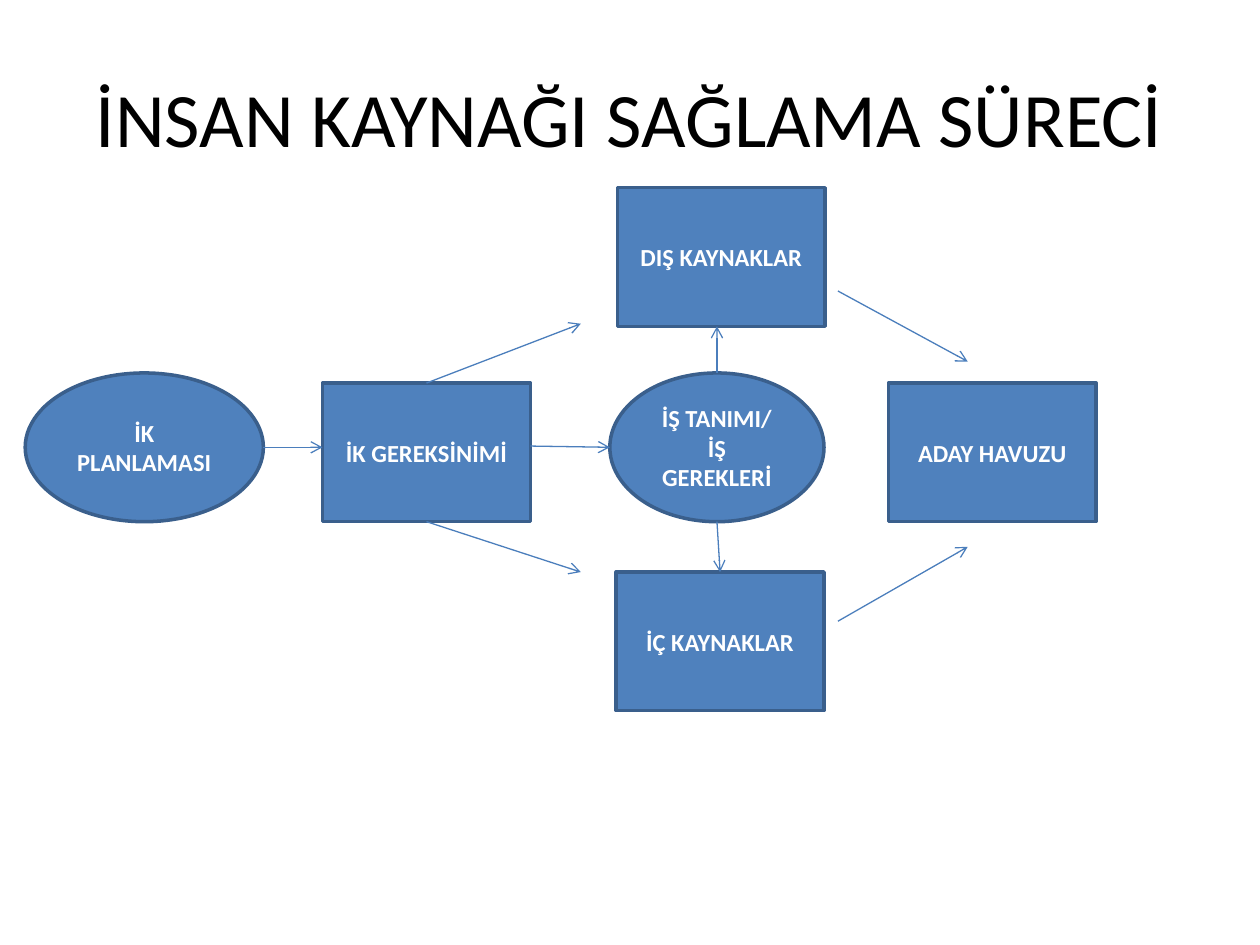
from lxml import etree
from pptx import Presentation
from pptx.dml.color import RGBColor
from pptx.enum.shapes import MSO_CONNECTOR, MSO_SHAPE
from pptx.enum.text import MSO_ANCHOR, PP_ALIGN
from pptx.oxml.ns import qn
from pptx.util import Pt

RECT, OVAL = MSO_SHAPE.RECTANGLE, MSO_SHAPE.OVAL
STRAIGHT = MSO_CONNECTOR.STRAIGHT
MIDDLE, CENTER = MSO_ANCHOR.MIDDLE, PP_ALIGN.CENTER
TOP, BOTTOM = 0, 2

FONT = "Calibri"
COLORS = {"title": "000000", "fill": "4F81BD", "border": "3A5F8C",
          "label": "FFFFFF", "arrow": "4B7EBC"}
BOX_W, BOX_H = 118.8, 79.2
OVAL_H = 85
ROW_TOP, OVAL_TOP = 218.9, 213.1


def write_text(frame, text, size, color, bold=False):
    frame.word_wrap = True
    frame.vertical_anchor = MIDDLE
    frame.text = text
    for paragraph in frame.paragraphs:
        paragraph.alignment = CENTER
        font = paragraph.runs[0].font
        font.name, font.size, font.bold = FONT, Pt(size), bold
        font.color.rgb = RGBColor.from_string(COLORS[color])


prs = Presentation()
prs.slide_width, prs.slide_height = Pt(720), Pt(540)
slide = prs.slides.add_slide(prs.slide_layouts[6])

title = slide.shapes.add_textbox(Pt(36), Pt(21.6), Pt(648), Pt(90))
write_text(title.text_frame, "İNSAN KAYNAĞI SAĞLAMA SÜRECİ", 44, "title")

# key: label, preset, left, top, width, height
stages = {
    "planning": ("İK PLANLAMASI", OVAL, 14.4, OVAL_TOP, 136.1, OVAL_H),
    "need": ("İK GEREKSİNİMİ", RECT, 184.3, ROW_TOP, BOX_W, BOX_H),
    "job": ("İŞ TANIMI/\nİŞ GEREKLERİ", OVAL, 348.5, OVAL_TOP, 122.4, OVAL_H),
    "internal": ("İÇ KAYNAKLAR", RECT, 352.1, 326.9, BOX_W, BOX_H),
    "external": ("DIŞ KAYNAKLAR", RECT, 352.8, 107.3, BOX_W, BOX_H),
    "pool": ("ADAY HAVUZU", RECT, 507.6, ROW_TOP, BOX_W, BOX_H),
}
nodes = {}
for key, (label, preset, *bounds) in stages.items():
    node = slide.shapes.add_shape(preset, *map(Pt, bounds))
    node.shadow.inherit = False
    node.fill.solid()
    node.fill.fore_color.rgb = RGBColor.from_string(COLORS["fill"])
    node.line.color.rgb = RGBColor.from_string(COLORS["border"])
    node.line.width = Pt(2)
    write_text(node.text_frame, label, 14, "label", bold=True)
    nodes[key] = node

# start x, start y, end x, end y, joined start, joined end
flows = [
    (150.5, 255.6, 184.3, 255.6, None, None),
    (243.7, 218.9, 331.9, 185, ("need", TOP), None),
    (243.7, 298.1, 331.9, 326.9, ("need", BOTTOM), None),
    (303.1, 254.9, 348.5, 255.6, None, None),
    (409.7, 298.1, 411.5, 326.9, None, ("internal", TOP)),
    (409.7, 213.1, 409.7, 186.5, ("job", TOP), None),
    (478.8, 166.3, 553, 206.6, None, None),
    (478.8, 355, 553, 312.5, None, None),
]
for *ends, start, end in flows:
    arrow = slide.shapes.add_connector(STRAIGHT, *map(Pt, ends))
    if start:
        arrow.begin_connect(nodes[start[0]], start[1])
    if end:
        arrow.end_connect(nodes[end[0]], end[1])
    arrow.line.color.rgb = RGBColor.from_string(COLORS["arrow"])
    arrow.line.width = Pt(0.75)
    etree.SubElement(arrow.line._get_or_add_ln(), qn("a:tailEnd"), type="arrow")
    etree.SubElement(arrow._element.spPr, qn("a:effectLst"))

prs.save("out.pptx")
